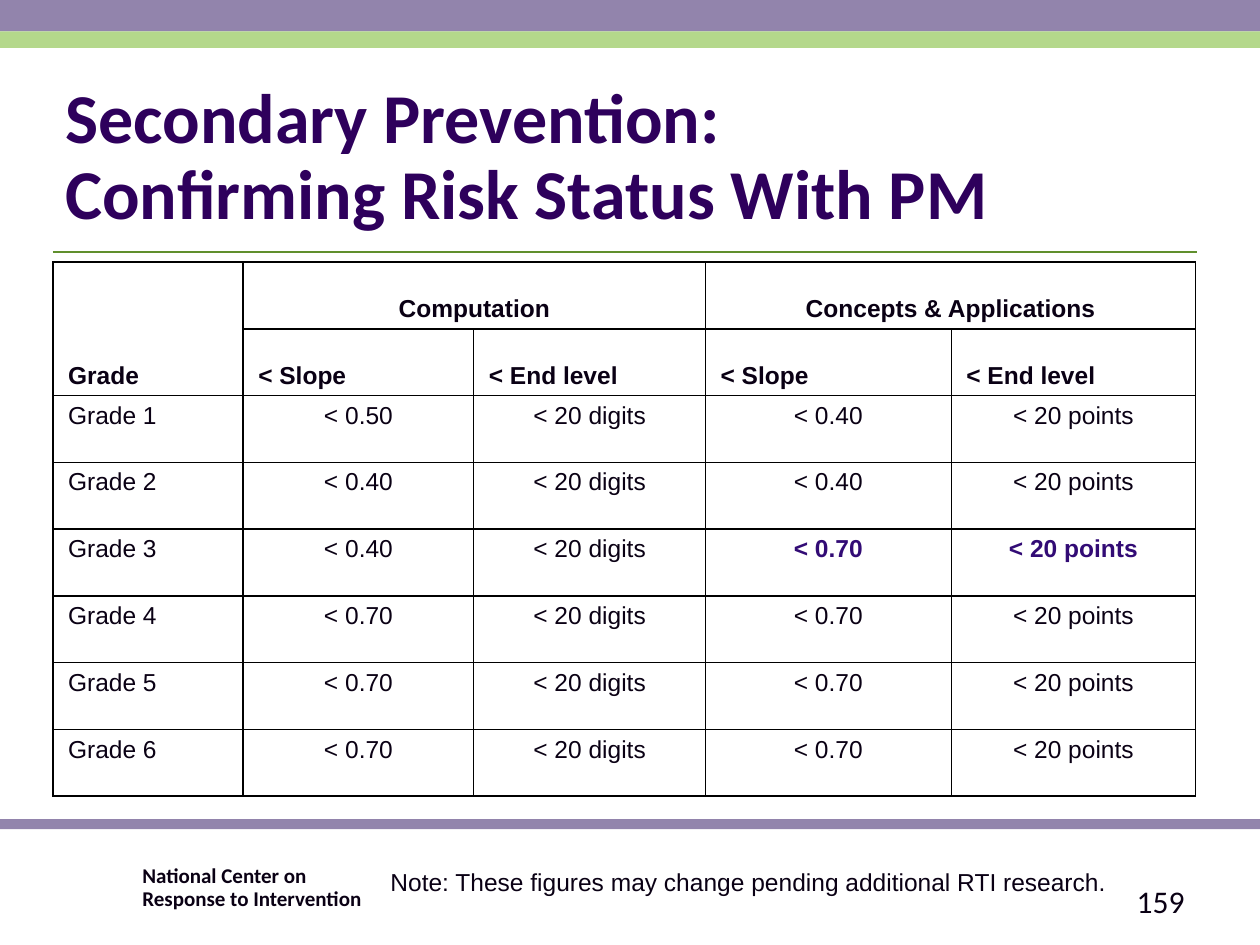
from lxml import etree
from pptx import Presentation
from pptx.dml.color import RGBColor
from pptx.enum.shapes import MSO_CONNECTOR, MSO_SHAPE
from pptx.enum.text import MSO_ANCHOR, PP_ALIGN
from pptx.oxml.ns import qn
from pptx.util import Inches, Pt

PURPLE = RGBColor(0x92, 0x84, 0xAC)
LIGHT_GREEN = RGBColor(0xB4, 0xD8, 0x8B)
GREEN = RGBColor(0x60, 0x8F, 0x2D)
TITLE_COLOR = RGBColor(0x2E, 0x00, 0x5C)
INK = RGBColor(0x0A, 0x00, 0x14)
HIGHLIGHT = RGBColor(0x32, 0x0B, 0x75)
BLACK = RGBColor(0, 0, 0)
WHITE = RGBColor(0xFF, 0xFF, 0xFF)

LEFT, CENTER, RIGHT = PP_ALIGN.LEFT, PP_ALIGN.CENTER, PP_ALIGN.RIGHT
TOP, MIDDLE, BOTTOM = MSO_ANCHOR.TOP, MSO_ANCHOR.MIDDLE, MSO_ANCHOR.BOTTOM
RECT, STRAIGHT = MSO_SHAPE.RECTANGLE, MSO_CONNECTOR.STRAIGHT

COL_WIDTHS = [1.51, 1.83, 1.84, 1.95, 1.94]
ROW_HEIGHT = 0.53
SUBHEADS = ["< Slope", "< End level"]
SLOPES = [  # computation, concepts & applications
    ("0.50", "0.40"),
    ("0.40", "0.40"),
    ("0.40", "0.70"),
    ("0.70", "0.70"),
    ("0.70", "0.70"),
    ("0.70", "0.70"),
]
HIGHLIGHTED_GRADE = 3


class SlideBuilder:
    body_font = "Arial"
    head_font = "Calibri"
    table_size = 14

    def __init__(self, slide):
        self.slide = slide

    def band(self, top, height, color):
        sp = self.slide.shapes.add_shape(
            RECT, 0, Inches(top), Inches(10), Inches(height))
        sp.shadow.inherit = False
        sp.fill.solid()
        sp.fill.fore_color.rgb = color
        sp.line.fill.background()

    def rule(self, left, right, y, color):
        line = self.slide.shapes.add_connector(
            STRAIGHT, Inches(left), Inches(y), Inches(right), Inches(y))
        line.line.color.rgb = color
        line.line.width = Pt(0.75)
        etree.SubElement(line._element.spPr, qn("a:effectLst"))

    def run(self, p, text, size, font, color=INK, bold=False):
        r = p.add_run()
        r.text = text
        r.font.size = Pt(size)
        r.font.name = font
        r.font.bold = bold
        r.font.color.rgb = color

    def text(self, box, lines, size, font, color=INK, bold=False,
             align=LEFT, anchor=TOP, spacing=None, inset=None):
        """Add one paragraph whose lines are parted by line breaks."""
        sp = self.slide.shapes.add_textbox(*map(Inches, box))
        tf = sp.text_frame
        tf.word_wrap = True
        tf.vertical_anchor = anchor
        if inset is not None:
            tf.margin_left = tf.margin_right = Inches(inset)
            tf.margin_top = tf.margin_bottom = Inches(inset)
        p = tf.paragraphs[0]
        p.alignment = align
        if spacing:
            p.line_spacing = spacing
        for i, line in enumerate(lines):
            if i:
                p.add_line_break()
            self.run(p, line, size, font, color, bold)

    def table(self, left, top, rows, widths, row_height):
        frame = self.slide.shapes.add_table(
            rows, len(widths), Inches(left), Inches(top),
            Inches(sum(widths)), Inches(rows * row_height))
        table = frame.table
        table.first_row = table.horz_banding = False
        for col, width in zip(table.columns, widths):
            col.width = Inches(width)
        for row in table.rows:
            row.height = Inches(row_height)
        for cell in table.iter_cells():
            self.borders(cell)
            cell.fill.solid()
            cell.fill.fore_color.rgb = WHITE
            cell.margin_left = cell.margin_right = Inches(0.12)
        return table

    def borders(self, cell):
        tc_pr = cell._tc.get_or_add_tcPr()
        for side in ("a:lnL", "a:lnR", "a:lnT", "a:lnB"):
            ln = etree.SubElement(tc_pr, qn(side), w=str(Pt(1)))
            fill = etree.SubElement(ln, qn("a:solidFill"))
            etree.SubElement(fill, qn("a:srgbClr"), val=str(BLACK))

    def cell(self, cell, text, align=LEFT, anchor=TOP, color=INK, bold=False):
        cell.vertical_anchor = anchor
        p = cell.text_frame.paragraphs[0]
        p.alignment = align
        self.run(p, text, self.table_size, self.body_font, color, bold)


def add_risk_table(s):
    table = s.table(0.42, 2.08, len(SLOPES) + 2, COL_WIDTHS, ROW_HEIGHT)
    table.cell(0, 0).merge(table.cell(1, 0))
    s.cell(table.cell(0, 0), "Grade", anchor=BOTTOM, bold=True)
    for col, name in ((1, "Computation"), (3, "Concepts & Applications")):
        table.cell(0, col).merge(table.cell(0, col + 1))
        s.cell(table.cell(0, col), name, CENTER, BOTTOM, bold=True)
        for i, subhead in enumerate(SUBHEADS):
            s.cell(table.cell(1, col + i), subhead, anchor=BOTTOM, bold=True)

    for grade, (computation, concepts) in enumerate(SLOPES, start=1):
        row = grade + 1
        s.cell(table.cell(row, 0), f"Grade {grade}")
        values = [computation, "20 digits", concepts, "20 points"]
        for col, value in enumerate(values, start=1):
            marked = grade == HIGHLIGHTED_GRADE and col >= 3
            s.cell(table.cell(row, col), f"< {value}", CENTER,
                   color=HIGHLIGHT if marked else INK, bold=marked)


def main():
    prs = Presentation()
    prs.slide_width, prs.slide_height = Inches(10), Inches(7.5)
    s = SlideBuilder(prs.slides.add_slide(prs.slide_layouts[6]))

    s.band(6.5, 0.08, PURPLE)
    s.band(0, 0.25, PURPLE)
    s.text((1.09, 6.83, 3.24, 0.3),
           ["National Center on", "Response to Intervention"],
           12, s.head_font, bold=True, spacing=0.9, inset=0.04)
    s.band(0.25, 0.13, LIGHT_GREEN)
    s.rule(0.42, 9.5, 2, GREEN)
    s.text((0.42, 0.83, 9.08, 1.08),
           ["Secondary Prevention:", "Confirming Risk Status With PM"],
           40, s.head_font, TITLE_COLOR, bold=True, anchor=BOTTOM, spacing=0.9)
    add_risk_table(s)
    s.text((3, 6.83, 7.92, 0.33),
           ["Note: These figures may change pending additional RTI research."],
           14, s.body_font)
    s.text((7.17, 6.95, 2.33, 0.4), ["159"], 18, s.head_font,
           align=RIGHT, anchor=MIDDLE)

    prs.save("out.pptx")


if __name__ == "__main__":
    main()
